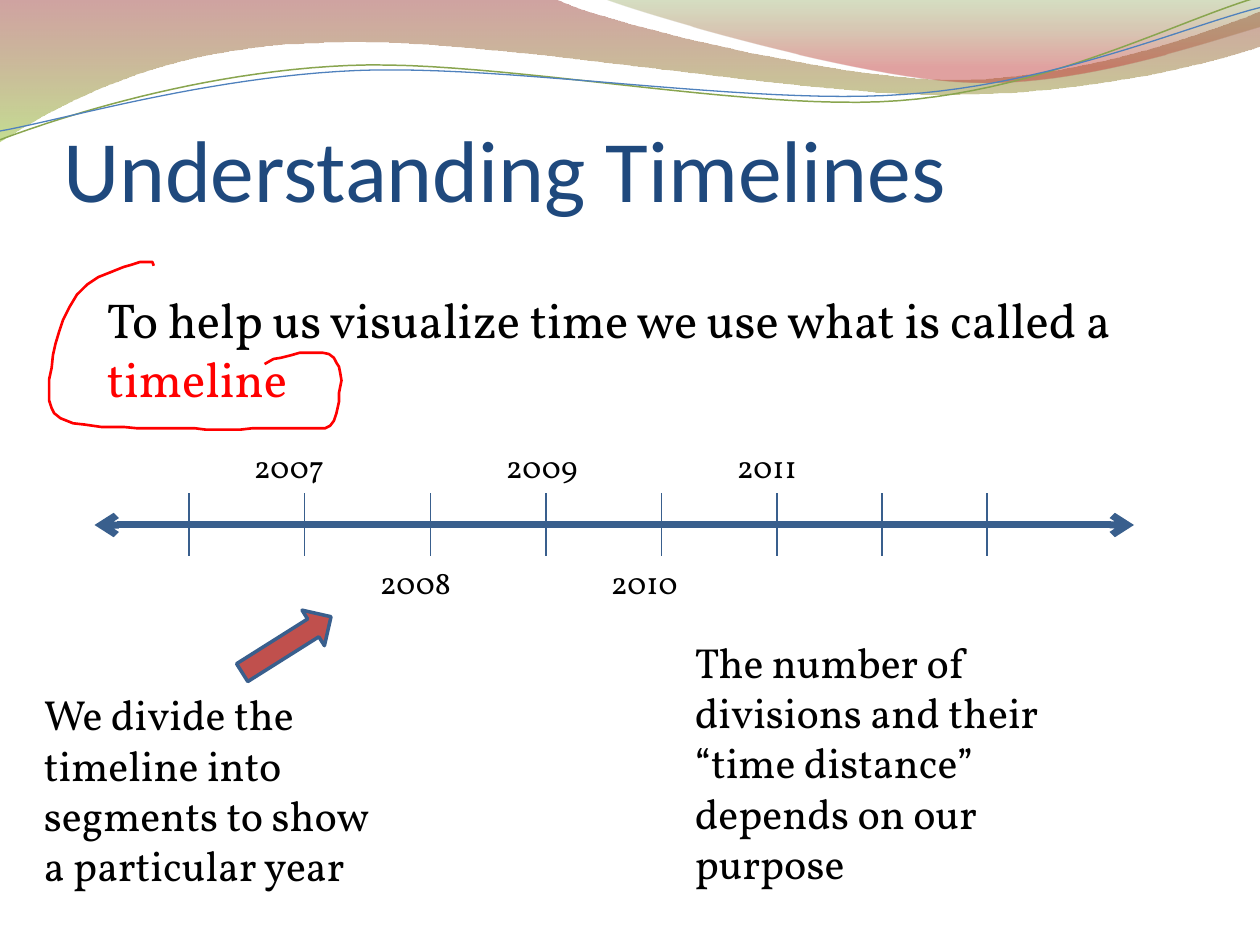
import pptx
import pptx.dml.color
import pptx.enum.shapes
import pptx.enum.text
import pptx.oxml.ns
import pptx.util
from lxml import etree

RGB = pptx.dml.color.RGBColor
NAVY = RGB(0x1F, 0x49, 0x7D)
STEEL = RGB(0x39, 0x5F, 0x8D)
BLUE = RGB(0x4F, 0x81, 0xBD)
GREEN = RGB(0x89, 0xA5, 0x4F)
OLIVE = RGB(0x76, 0x95, 0x37)
LIME = RGB(0x95, 0xC2, 0x38)
WINE = RGB(0x97, 0x33, 0x30)
ROSE = RGB(0xBE, 0x33, 0x30)
BRICK = RGB(0xC0, 0x50, 0x4D)
RED = RGB(0xFF, 0x00, 0x00)
BLACK = RGB(0x00, 0x00, 0x00)

COLS, ROWS = 120, 90  # layout grid
FINE = 1000           # curve units across the slide width


def tag(parent, name, **attrs):
    return etree.SubElement(parent, pptx.oxml.ns.qn(name), attrs)


def trace(start, steps, parts=24):
    """Turn line steps (x, y) and cubic steps (six numbers) into points."""
    pts = [start]
    for step in steps:
        if len(step) == 2:
            pts.append(step)
            continue
        (ax, ay), (bx, by, cx, cy, dx, dy) = pts[-1], step
        for i in range(1, parts + 1):
            t = i / parts
            u = 1 - t
            w = (u ** 3, 3 * u * u * t, 3 * u * t * t, t ** 3)
            pts.append((w[0] * ax + w[1] * bx + w[2] * cx + w[3] * dx,
                        w[0] * ay + w[1] * by + w[2] * cy + w[3] * dy))
    return pts


class Board:
    head, body = "Calibri", "Vollkorn"

    def __init__(self):
        self.deck = pptx.Presentation()
        self.deck.slide_width = pptx.util.Inches(10)
        self.deck.slide_height = pptx.util.Inches(7.5)
        self.slide = self.deck.slides.add_slide(self.deck.slide_layouts[5])
        self.shapes = self.slide.shapes

    def grid(self, *vals):
        """Columns and rows, in turn, as lengths."""
        units = (self.deck.slide_width / COLS, self.deck.slide_height / ROWS)
        return [pptx.util.Emu(round(v * units[i % 2])) for i, v in enumerate(vals)]

    def add_runs(self, para, runs, size, font):
        for text, color in runs:
            run = para.add_run()
            run.text = text
            run.font.name = font
            run.font.size = pptx.util.Pt(size)
            run.font.color.rgb = color

    def title(self, text, box):
        shape = self.shapes.title
        shape.left, shape.top, shape.width, shape.height = self.grid(*box)
        frame = shape.text_frame
        frame.auto_size = pptx.enum.text.MSO_AUTO_SIZE.NONE
        frame.vertical_anchor = pptx.enum.text.MSO_ANCHOR.BOTTOM
        frame.margin_left = frame.margin_right = frame.margin_bottom = 0
        frame.margin_top = pptx.util.Inches(0.05)
        para = frame.paragraphs[0]
        para.alignment = pptx.enum.text.PP_ALIGN.LEFT
        self.add_runs(para, [(text, NAVY)], 50, self.head)

    def text(self, runs, box, size):
        frame = self.shapes.add_textbox(*self.grid(*box)).text_frame
        frame.word_wrap = True
        frame.auto_size = pptx.enum.text.MSO_AUTO_SIZE.SHAPE_TO_FIT_TEXT
        self.add_runs(frame.paragraphs[0], runs, size, self.body)

    def line(self, ends, width, arrows=False):
        kind = pptx.enum.shapes.MSO_CONNECTOR.STRAIGHT
        shape = self.shapes.add_connector(kind, *self.grid(*ends))
        shape.line.color.rgb = STEEL
        shape.line.width = pptx.util.Pt(width)
        props = shape._element.spPr
        if arrows:
            ln = props.find(pptx.oxml.ns.qn("a:ln"))
            tag(ln, "a:headEnd", type="arrow")
            tag(ln, "a:tailEnd", type="arrow")
        tag(props, "a:effectLst")

    def arrow(self, box, turn):
        kind = pptx.enum.shapes.MSO_SHAPE.RIGHT_ARROW
        shape = self.shapes.add_shape(kind, *self.grid(*box))
        shape.rotation = turn
        shape.shadow.inherit = False
        shape.fill.solid()
        shape.fill.fore_color.rgb = BRICK
        shape.line.color.rgb = STEEL
        shape.line.width = pptx.util.Pt(2)

    def outline(self, pts, close):
        unit = self.deck.slide_width / FINE
        pts = [(x * unit, y * unit) for x, y in pts]
        pen = self.shapes.build_freeform(*pts[0], scale=1.0)
        pen.add_line_segments(pts[1:], close=close)
        shape = pen.convert_to_shape()
        shape.shadow.inherit = False
        return shape

    def stroke(self, pts, color, width):
        shape = self.outline(pts, False)
        shape.fill.background()
        shape.line.color.rgb = color
        shape.line.width = pptx.util.Pt(width)

    def wave(self, pts, stops):
        shape = self.outline(pts, True)
        shape.line.fill.background()
        shape.fill.gradient()
        shape.fill.gradient_angle = 270
        for stop, (place, color, alpha) in zip(shape.fill.gradient_stops, stops):
            stop.position = place
            stop.color.rgb = color
        marks = shape._element.spPr.iter(pptx.oxml.ns.qn("a:srgbClr"))
        for mark, (place, color, alpha) in zip(marks, stops):
            tag(mark, "a:alpha", val=str(alpha * 1000))


def main():
    board = Board()

    # Waves across the top
    board.wave(trace((0, 0), [
        (440, -1), (476, 17, 664, 63, 758, 63), (853, 63, 958, 26, 1000, 9),
        (1001, 36), (983, 44, 870, 76, 746, 75), (622, 75, 382, 28, 257, 34),
        (129, 36, 46, 83, -1, 113)]), [(0, WINE, 45), (1, LIME, 55)])
    board.wave(trace((479, -1), [
        (509, 11, 682, 62, 769, 65), (856, 69, 961, 32, 1000, 21),
        (1000, 0)]), [(0, OLIVE, 30), (0.8, ROSE, 45)])
    board.stroke(trace((0, 111), [
        (48, 93, 158, 57, 277, 52), (395, 47, 593, 89, 713, 80),
        (833, 71, 938, 15, 998, -2)]), GREEN, 0.85)
    board.stroke(trace((0, 104), [
        (47, 96, 164, 61, 283, 56), (403, 51, 597, 84, 717, 75),
        (836, 67, 941, 21, 1000, 6)]), BLUE, 0.75)

    # Title and definition
    board.title("Understanding Timelines", (6, 6, 108, 15))
    board.text([("To help us visualize time we use what is called a ", BLACK),
                ("timeline", RED)], (9, 27, 100, 12.5), 28)

    # Timeline with its ticks and years
    board.line((9, 50, 108, 50), 4, arrows=True)
    for col in (18, 29, 41, 52, 63, 74, 84, 94):
        board.line((col, 47, col, 53), 0.75)
    for i, col in enumerate((23, 35, 47, 57, 69)):
        row = 53 if i % 2 else 42
        board.text([(str(2007 + i), BLACK)], (col, row, 12, 5), 18)

    # Remarks below
    board.text([("We divide the timeline into segments to show a particular year",
                 BLACK)], (3, 65, 34, 20.6), 24)
    board.text([("The number of divisions and their “time distance” depends on "
                 "our purpose", BLACK)], (65, 60, 41, 25.4), 24)
    board.arrow((22.3, 59.4, 10, 4), 327.8)

    # Hand-drawn loop around the term
    board.stroke([
        (122, 211), (121, 208), (111, 208), (105, 210), (98, 212), (88, 216),
        (78, 220), (69, 226), (61, 234), (55, 244), (50, 254), (47, 263),
        (44, 273), (42, 282), (41, 292), (39, 301), (39, 318), (41, 324),
        (43, 328), (48, 332), (58, 336), (67, 337), (81, 339), (99, 339),
        (109, 340), (155, 340), (163, 341), (191, 341), (200, 340), (258, 340),
        (262, 338), (265, 334), (267, 328), (269, 319), (269, 312), (271, 302),
        (270, 296), (269, 291), (267, 288), (265, 284), (261, 281), (256, 280),
        (238, 280), (231, 282), (223, 284), (217, 285), (210, 289)], RED, 1.5)

    board.deck.save("out.pptx")


if __name__ == "__main__":
    main()
